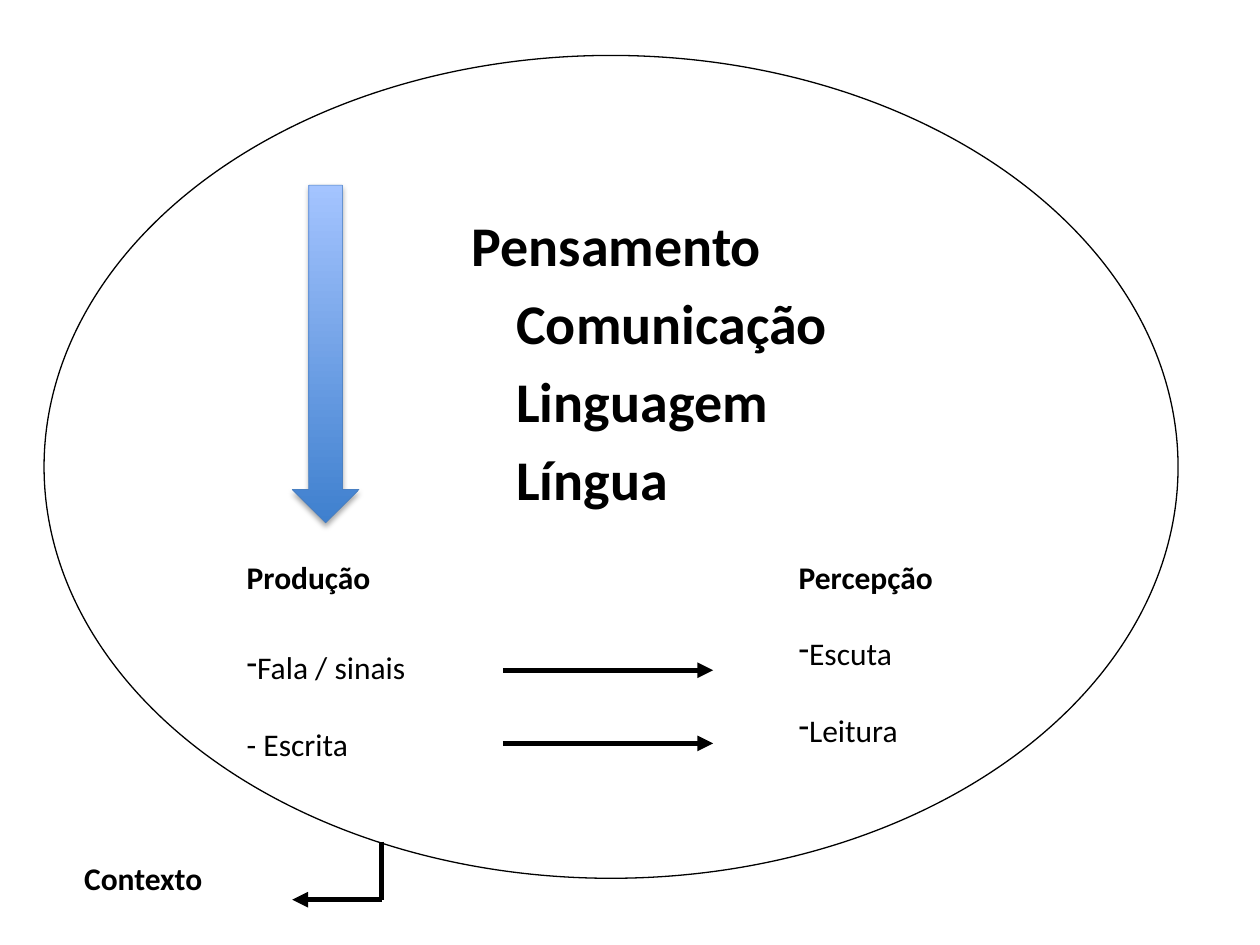
import pptx
import pptx.util
import pptx.dml.color
import pptx.enum.shapes
import pptx.enum.text
import pptx.oxml
import pptx.oxml.ns

Pt = pptx.util.Pt
RGB = pptx.dml.color.RGBColor.from_string
SHAPES = pptx.enum.shapes.MSO_SHAPE
ANCHOR = pptx.enum.text.MSO_ANCHOR
ALIGN = pptx.enum.text.PP_ALIGN

THEME = {
    "font": "Calibri", "ink": "000000",
    "arrow_bottom": "3F80CE", "arrow_top": "A4C4FF", "arrow_edge": "4B7EBC",
    "level_size": 32, "label_size": 18,
    "outline": 0.75, "arrow_outline": 0.25, "flow_width": 3,
}

SLIDE = (720, 540)
CONTEXT_OVAL = (25.2, 31.7, 648, 470.2)
DESCENT_ARROW = (167, 105.8, 38.2, 193)

LEVELS = [("Pensamento", 149.5), ("Comunicação", 175), ("Linguagem", 175), ("Língua", 175)]
LEVEL_GAP = 6
LEVEL_TOP = 20

LABELS = [
    ((449.3, 315.4, 145.4, 138.2), [
        ("Percepção", True, False, 22), ("Escuta", False, True, 22), ("Leitura", False, True, 0)]),
    ((133.9, 315.4, 118.8, 149), [
        ("Produção", True, False, 30), ("Fala / sinais", False, True, 22), ("- Escrita", False, False, 0)]),
    ((41, 487.4, 82.8, 28.8), [("Contexto", True, False, 0)]),
]

FLOWS = [
    ((287.3, 383), (407.5, 383), True),
    ((287.3, 424.8), (407.5, 424.8), True),
    ((218.2, 481), (218.2, 514.1), False),
    ((218.2, 514.1), (167, 514.1), True),
]


def apply(target, values):
    for key, value in values.items():
        setattr(target, key, value)


def add_xml(parent, tag, **attributes):
    child = pptx.oxml.parse_xml(f"<a:{tag} {pptx.oxml.ns.nsdecls('a')}/>")
    for key, value in attributes.items():
        child.set(key, str(value))
    parent.append(child)
    return child


def set_line(line, color, width):
    line.color.rgb = RGB(THEME[color])
    line.width = Pt(THEME[width])


def write(paragraph, text, size, bold, gap):
    apply(paragraph, {"alignment": ALIGN.LEFT, "space_before": Pt(0), "space_after": Pt(gap)})
    run = paragraph.add_run()
    run.text = text
    apply(run.font, {"name": THEME["font"], "size": Pt(THEME[size]), "bold": bold})
    run.font.color.rgb = RGB(THEME["ink"])


def paragraphs(frame, count):
    return [frame.paragraphs[0]] + [frame.add_paragraph() for _ in range(count - 1)]


def add_shape(slide, kind, box):
    shape = slide.shapes.add_shape(kind, *map(Pt, box))
    shape.shadow.inherit = False
    return shape


def add_context(slide):
    oval = add_shape(slide, SHAPES.OVAL, CONTEXT_OVAL)
    oval.fill.background()
    set_line(oval.line, "ink", "outline")
    apply(oval.text_frame, {
        "word_wrap": True, "vertical_anchor": ANCHOR.TOP,
        "margin_left": 0, "margin_right": 0, "margin_top": Pt(LEVEL_TOP), "margin_bottom": 0})
    for paragraph, (level, indent) in zip(paragraphs(oval.text_frame, len(LEVELS)), LEVELS):
        write(paragraph, level, "level_size", True, LEVEL_GAP)
        paragraph._p.get_or_add_pPr().set("marL", str(Pt(indent)))


def add_label(slide, box, entries):
    frame = slide.shapes.add_textbox(*map(Pt, box)).text_frame
    apply(frame, {"word_wrap": True, "vertical_anchor": ANCHOR.TOP})
    for paragraph, (text, bold, dashed, gap) in zip(paragraphs(frame, len(entries)), entries):
        write(paragraph, text, "label_size", bold, gap)
        if dashed:
            add_xml(paragraph._p.get_or_add_pPr(), "buChar", char="-")


def add_flow(slide, start, end, headed):
    flow = slide.shapes.add_connector(
        pptx.enum.shapes.MSO_CONNECTOR.STRAIGHT, *map(Pt, start + end))
    set_line(flow.line, "ink", "flow_width")
    if headed:
        add_xml(flow.line._get_or_add_ln(), "tailEnd", type="triangle")
    add_xml(flow._element.spPr, "effectLst")


def add_descent(slide):
    arrow = add_shape(slide, SHAPES.DOWN_ARROW, DESCENT_ARROW)
    arrow.fill.gradient()
    arrow.fill.gradient_angle = 90
    for stop, color in zip(arrow.fill.gradient_stops, ("arrow_bottom", "arrow_top")):
        stop.color.rgb = RGB(THEME[color])
    set_line(arrow.line, "arrow_edge", "arrow_outline")
    effects = arrow._element.spPr.find(pptx.oxml.ns.qn("a:effectLst"))
    shadow = add_xml(effects, "outerShdw", blurRad=Pt(3.1), dist=Pt(1.8), dir=5400000, rotWithShape=0)
    add_xml(add_xml(shadow, "srgbClr", val=THEME["ink"]), "alpha", val=35000)


def main():
    deck = pptx.Presentation()
    deck.slide_width, deck.slide_height = map(Pt, SLIDE)
    slide = deck.slides.add_slide(deck.slide_layouts[6])
    add_context(slide)
    for box, entries in LABELS:
        add_label(slide, box, entries)
    for start, end, headed in FLOWS:
        add_flow(slide, start, end, headed)
    add_descent(slide)
    deck.save("out.pptx")


if __name__ == "__main__":
    main()
